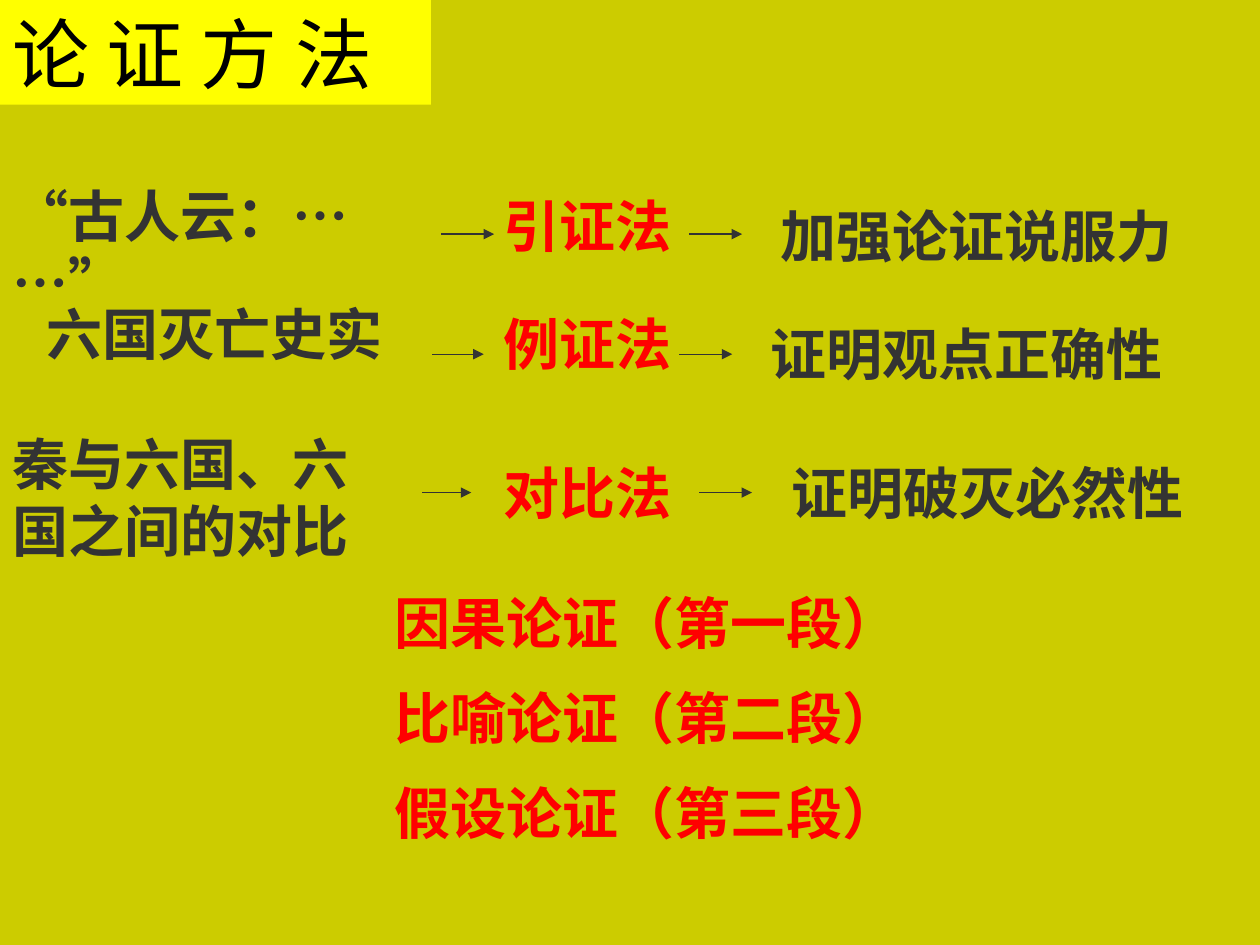
"""Build the slide on methods of argument."""
from dataclasses import dataclass

import pptx
import pptx.dml.color
import pptx.enum.shapes
import pptx.enum.text
import pptx.util
from lxml import etree
from pptx.oxml.ns import qn

Cm, Pt = pptx.util.Cm, pptx.util.Pt
RGB = pptx.dml.color.RGBColor.from_string


@dataclass(frozen=True)
class Theme:
    background: str = "CCCC00"
    banner: str = "FFFF00"
    title: str = "000000"
    body: str = "333333"
    accent: str = "FF0000"
    font: str = "Times New Roman"
    title_size: int = 44
    body_size: int = 32
    paragraph_gap: int = 16
    line_width: float = 0.75


THEME = Theme()
LINE_HEIGHT = 1.6
METHOD_LEFT, METHOD_WIDTH = 9.91, 4.39

ROWS = [
    dict(evidence=("“古人云：… …”", 0, 3.53, 9.7, LINE_HEIGHT),
         method=("引证法", 3.73),
         effect=("加强论证说服力", 15.49, 3.94, 8.99),
         arrow_y=4.72, arrows=[(8.89, 9.96), (13.89, 14.96)]),
    dict(evidence=("六国灭亡史实", 0.69, 5.92, 7.59, LINE_HEIGHT),
         method=("例证法", 6.12),
         effect=("证明观点正确性", 15.29, 6.32, 8.79),
         arrow_y=7.14, arrows=[(8.71, 9.75), (13.69, 14.76)]),
    dict(evidence=("秦与六国、六国之间的对比", 0, 8.53, 8.1, 2.97),
         method=("对比法", 9.12),
         effect=("证明破灭必然性", 15.7, 9.12, 8.81),
         arrow_y=9.93, arrows=[(8.51, 9.5), (14.1, 15.16)]),
]
OTHER_METHODS = "因果论证（第一段）\n比喻论证（第二段）\n假设论证（第三段）"


def add_text(s, text, left, top, width, height, color, size=THEME.body_size, bold=True):
    """Add a wrapping text box with one paragraph per line and return it."""
    sp = s.shapes.add_textbox(Cm(left), Cm(top), Cm(width), Cm(height))
    tf = sp.text_frame
    tf.word_wrap = True
    tf.auto_size = pptx.enum.text.MSO_AUTO_SIZE.SHAPE_TO_FIT_TEXT
    tf.text = text
    for i, p in enumerate(tf.paragraphs):
        if i:
            p.space_before = Pt(THEME.paragraph_gap)
        for r in p.runs:
            r.font.name = THEME.font
            r.font.size = Pt(size)
            r.font.bold = bold
            r.font.color.rgb = RGB(color)
    return sp


def add_title(s, text):
    """Add the title on its filled banner."""
    sp = add_text(s, text, 0, 0, 8.69, 2.11, THEME.title, THEME.title_size, False)
    sp.fill.solid()
    sp.fill.fore_color.rgb = RGB(THEME.banner)


def add_arrow(s, start, end, y):
    """Add a horizontal arrow."""
    cx = s.shapes.add_connector(
        pptx.enum.shapes.MSO_CONNECTOR.STRAIGHT, Cm(start), Cm(y), Cm(end), Cm(y))
    cx.line.color.rgb = RGB(THEME.body)
    cx.line.width = Pt(THEME.line_width)
    etree.SubElement(cx.line._get_or_add_ln(), qn("a:tailEnd"), type="triangle")
    etree.SubElement(cx._element.spPr, qn("a:effectLst"))


def add_row(s, evidence, method, effect, arrow_y, arrows):
    """Add evidence, method and effect, linked by arrows."""
    add_text(s, *evidence, THEME.body)
    name, top = method
    add_text(s, name, METHOD_LEFT, top, METHOD_WIDTH, LINE_HEIGHT, THEME.accent)
    add_text(s, *effect, LINE_HEIGHT, THEME.body)
    for start, end in arrows:
        add_arrow(s, start, end, arrow_y)


def main():
    """Build and save the slide."""
    prs = pptx.Presentation()
    prs.slide_width, prs.slide_height = Cm(25.4), Cm(19.05)
    s = prs.slides.add_slide(prs.slide_layouts[6])
    s.background.fill.solid()
    s.background.fill.fore_color.rgb = RGB(THEME.background)
    add_title(s, "论 证 方 法")
    for row in ROWS:
        add_row(s, **row)
    add_text(s, OTHER_METHODS, 7.7, 11.73, 14.4, 5.66, THEME.accent)
    prs.save("out.pptx")


if __name__ == "__main__":
    main()
